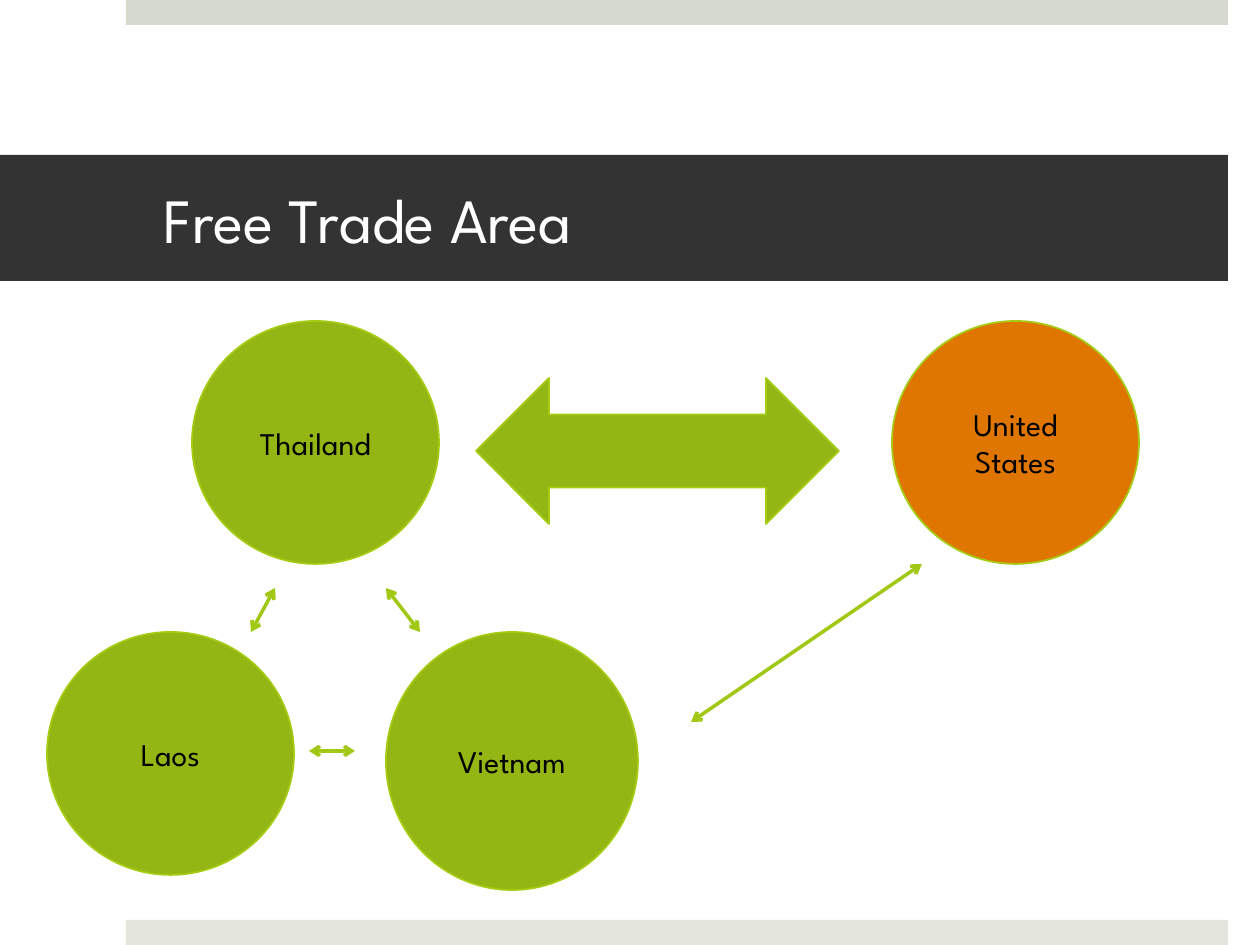
import pptx
import pptx.dml.color
import pptx.enum.shapes
import pptx.enum.text
import pptx.util
from lxml import etree
from pptx.oxml.ns import qn

SHAPES = pptx.enum.shapes.MSO_SHAPE
EMU_PER_PX = 914400 // 126
FONT = "League Spartan"
COLORS = {
    "top band": "D6D9CD",
    "bottom band": "E4E6DE",
    "title bar": "333333",
    "title text": "FFFFFF",
    "member": "93B614",
    "partner": "E07602",
    "outline": "A5CC12",
    "link": "A2C816",
    "label": "000000",
}

# Boxes are left, top, width, height in px.
BANDS = [("top band", (126, 0, 1102, 25)), ("bottom band", (126, 920, 1102, 25))]
TITLE = ("Free Trade Area", (0, 155, 1228, 126))
COUNTRIES = [
    ("Thailand", "member", (192, 321, 247, 243)),
    ("Vietnam", "member", (386, 632, 252, 258)),
    ("Laos", "member", (47, 632, 247, 243)),
    ("United States", "partner", (892, 321, 247, 243)),
]
TRADE_ARROW = (476, 378, 363, 146)
# Links are start x, start y, end x, end y in px.
LINKS = [
    (251, 632, 275, 588),
    (386, 588, 420, 632),
    (309, 751, 355, 751),
    (691, 722, 922, 564),
]


def px(value):
    return pptx.util.Emu(value * EMU_PER_PX)


def rgb(name):
    return pptx.dml.color.RGBColor.from_string(COLORS[name])


def add_filled(slide, kind, box, fill, outlined=False):
    shape = slide.shapes.add_shape(kind, *map(px, box))
    shape.shadow.inherit = False
    shape.fill.solid()
    shape.fill.fore_color.rgb = rgb(fill)
    if outlined:
        shape.line.color.rgb = rgb("outline")
        shape.line.width = pptx.util.Pt(1)
    else:
        shape.line.fill.background()
    return shape


def set_text(shape, text, size, color, alignment):
    frame = shape.text_frame
    frame.text = text
    frame.word_wrap = True
    frame.vertical_anchor = pptx.enum.text.MSO_ANCHOR.MIDDLE
    paragraph = frame.paragraphs[0]
    paragraph.alignment = alignment
    font = paragraph.runs[0].font
    font.name = FONT
    font.size = pptx.util.Pt(size)
    font.color.rgb = rgb(color)


def add_link(slide, ends):
    """Draw a line with an arrowhead at both ends."""
    connector = slide.shapes.add_connector(
        pptx.enum.shapes.MSO_CONNECTOR.STRAIGHT, *map(px, ends))
    connector.line.color.rgb = rgb("link")
    connector.line.width = pptx.util.Pt(2)
    line = connector.line._get_or_add_ln()
    for end in ("a:headEnd", "a:tailEnd"):
        etree.SubElement(line, qn(end), type="arrow")
    etree.SubElement(connector._element.spPr, qn("a:effectLst"))


def main():
    presentation = pptx.Presentation()
    presentation.slide_width = pptx.util.Inches(10)
    presentation.slide_height = pptx.util.Inches(7.5)
    slide = presentation.slides.add_slide(presentation.slide_layouts[6])
    align = pptx.enum.text.PP_ALIGN

    for fill, box in BANDS:
        add_filled(slide, SHAPES.RECTANGLE, box, fill)

    title, box = TITLE
    bar = add_filled(slide, SHAPES.RECTANGLE, box, "title bar")
    set_text(bar, title, 36, "title text", align.LEFT)
    bar.text_frame.margin_left = px(164)
    bar.text_frame.margin_right = px(38)

    for name, role, box in COUNTRIES:
        circle = add_filled(slide, SHAPES.OVAL, box, role, outlined=True)
        set_text(circle, name, 18, "label", align.CENTER)

    add_filled(slide, SHAPES.LEFT_RIGHT_ARROW, TRADE_ARROW, "member", outlined=True)
    for ends in LINKS:
        add_link(slide, ends)

    presentation.save("out.pptx")


if __name__ == "__main__":
    main()
